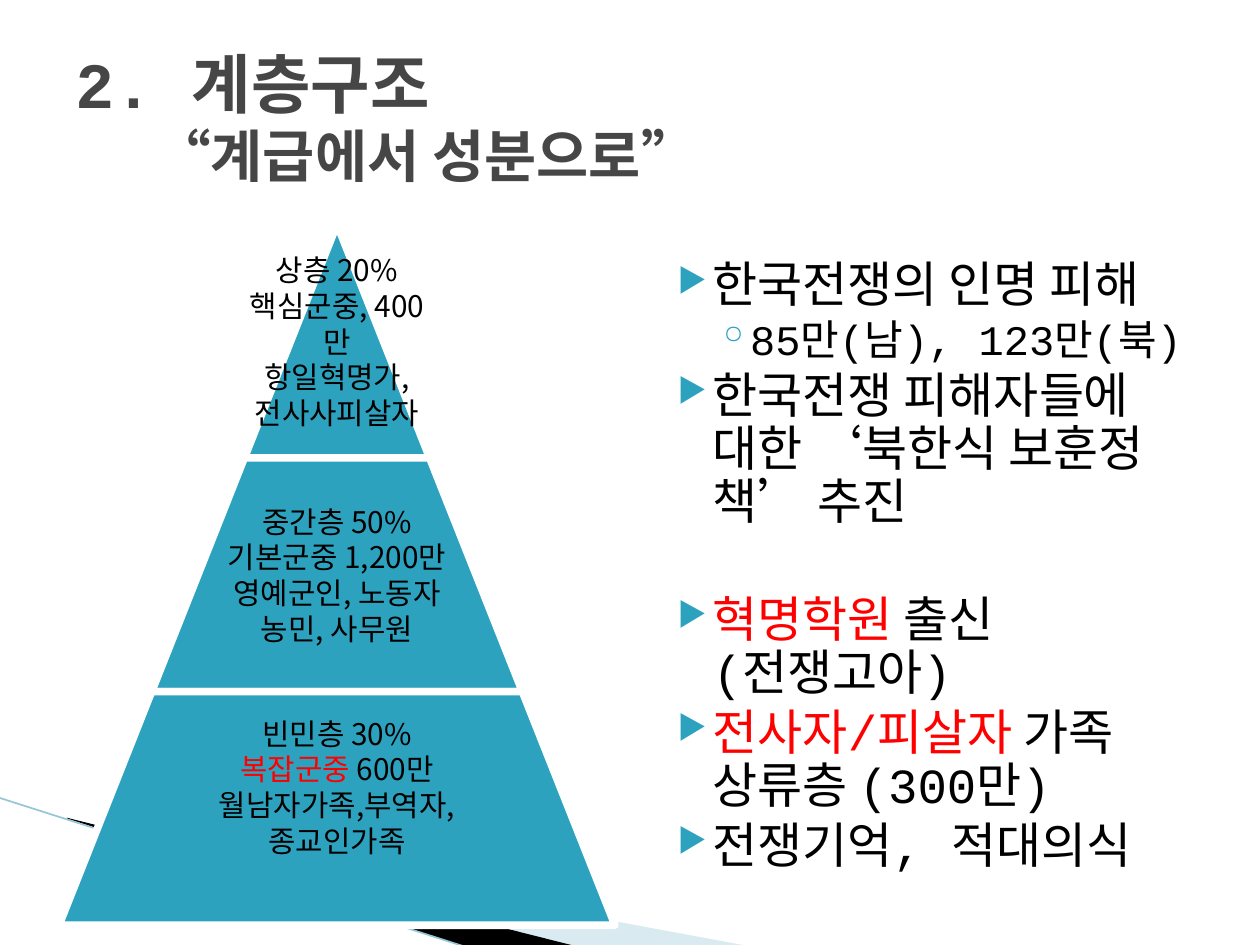
"""Build the slide on class structure: a three-tier pyramid beside a bulleted list."""
from lxml import etree
from pptx import Presentation
from pptx import util as u
from pptx.dml import color
from pptx.enum import shapes, text
from pptx.oxml import ns

Pt = u.Pt
MONO, SANS, QUOTE = "Courier New", "Noto Sans CJK KR", "Arial"
TEAL, BLACK, RED, GREY, WHITE = "2DA2BF", "000000", "FF0000", "464646", "FFFFFF"

HEADING = [("2. 계층구조", 36.9, 0), ("“계급에서 성분으로”", 32.4, 45)]
TIERS = [
    [[("상층 20%", BLACK)], [("핵심군중, 400만", BLACK)], [("항일혁명가,전사사피살자", BLACK)]],
    [[("중간층 50%", BLACK)], [("기본군중 1,200만", BLACK)],
     [("영예군인, 노동자 농민, 사무원", BLACK)]],
    [[("빈민층 30%", BLACK)], [("복잡군중 ", RED), ("600만", BLACK)],
     [("월남자가족,부역자,종교인가족", BLACK)]],
]
TIER_LABELS = [(105.8, 1.4), (137.5, 1.4), (206.6, 26)]
POINTS = [
    (0, 0, [("한국전쟁의 인명 피해", BLACK, MONO)]),
    (1, 3.2, [("85만(남), 123만(북)", BLACK, MONO)]),
    (0, 4, [("한국전쟁 피해자들에 대한 ", BLACK, MONO), ("‘", BLACK, QUOTE),
            ("북한식 보훈정책", BLACK, MONO), ("’ ", BLACK, QUOTE), ("추진", BLACK, MONO)]),
    (0, 37, [("혁명학원", RED, MONO), (" 출신(전쟁고아)", BLACK, MONO)]),
    (0, 4, [("전사자/피살자 ", RED, MONO), ("가족 상류층 (300만)", BLACK, MONO)]),
    (0, 4, [("전쟁기억, 적대의식", BLACK, MONO)]),
]
LEVELS = [
    {"size": 28, "margin": 28.8, "hang": 20.2, "bullet": "▶", "scale": 68},
    {"size": 24, "margin": 49, "hang": 18, "bullet": "◦", "scale": 100},
]
WAVES = [
    ("A0CBDC", 40, [(39.6, 468.7), (428.4, 540.7), (328.3, 540.7), (39.6, 468)]),
    (BLACK, 100, [(38.2, 467.3), (329, 540.7), (267.8, 541.4), (38.9, 468)]),
]
CENTER, PYRAMID_TOP, TIER_STEP, TIER_WIDTH = 192.6, 128.2, 133.5, 105.9


def rgb(value):
    return color.RGBColor.from_string(value)


def add_xml(parent, tag, **attributes):
    return etree.SubElement(parent, ns.qn(tag), attributes)


def paint(shape, fill, line=None, width=0):
    shape.shadow.inherit = False
    shape.fill.solid()
    shape.fill.fore_color.rgb = rgb(fill)
    if line:
        shape.line.color.rgb = rgb(line)
        shape.line.width = Pt(width)
    else:
        shape.line.fill.background()


def add_run(paragraph, words, size, tint, face, bold=False):
    run = paragraph.add_run()
    run.text = words
    run.font.size, run.font.bold, run.font.name = Pt(size), bold, face
    run.font.color.rgb = rgb(tint)
    add_xml(run.font._element, "a:ea", typeface=SANS)


def add_frame(slide, left, top, width, height, anchor=text.MSO_ANCHOR.MIDDLE):
    box = slide.shapes.add_textbox(Pt(left), Pt(top), Pt(width), Pt(height))
    box.text_frame.word_wrap = True
    box.text_frame.vertical_anchor = anchor
    return box


def paragraphs(frame, items):
    for index, item in enumerate(items):
        yield (frame.add_paragraph() if index else frame.paragraphs[0]), item


def draw_waves(slide):
    for fill, opacity, corners in WAVES:
        start, *rest = [(Pt(x), Pt(y)) for x, y in corners]
        builder = slide.shapes.build_freeform(*start)
        builder.add_line_segments(rest)
        wave = builder.convert_to_shape()
        paint(wave, fill)
        if opacity < 100:
            tint = wave._element.spPr.find(".//" + ns.qn("a:srgbClr"))
            add_xml(tint, "a:alpha", val=str(opacity * 1000))
    edge = slide.shapes.add_connector(
        shapes.MSO_CONNECTOR.STRAIGHT, Pt(-0.7), Pt(455.8), Pt(267.1), Pt(541.4))
    edge.line.color.rgb = rgb("97C5D8")
    edge.line.width = Pt(0.95)
    add_xml(edge._element.spPr, "a:effectLst")


def draw_heading(slide):
    frame = add_frame(slide, 36, 21.6, 648, 90).text_frame
    for paragraph, (words, size, margin) in paragraphs(frame, HEADING):
        paragraph._p.get_or_add_pPr().set("marL", str(Pt(margin)))
        add_run(paragraph, words, size, GREY, MONO, bold=True)


def draw_points(slide):
    panel = add_frame(slide, 371.5, 145.4, 322.6, 380.2, text.MSO_ANCHOR.TOP)
    paint(panel, WHITE)
    for paragraph, (level, gap, runs) in paragraphs(panel.text_frame, POINTS):
        style = LEVELS[level]
        props = paragraph._p.get_or_add_pPr()
        props.set("marL", str(Pt(style["margin"])))
        props.set("indent", str(-Pt(style["hang"])))
        add_xml(add_xml(props, "a:buClr"), "a:srgbClr", val=TEAL)
        add_xml(props, "a:buSzPct", val=str(style["scale"] * 1000))
        add_xml(props, "a:buChar", char=style["bullet"])
        paragraph.level = level
        paragraph.line_spacing = 0.9
        paragraph.space_before = Pt(gap)
        for words, tint, face in runs:
            add_run(paragraph, words, style["size"], tint, face)


def draw_pyramid(slide):
    for index, (lines, (label_width, bottom)) in enumerate(zip(TIERS, TIER_LABELS)):
        width, top = TIER_WIDTH * (index + 1), PYRAMID_TOP + TIER_STEP * index
        tier = slide.shapes.add_shape(
            shapes.MSO_SHAPE.TRAPEZOID, Pt(CENTER - width / 2), Pt(top), Pt(width), Pt(TIER_STEP))
        tier.adjustments[0] = TIER_WIDTH / 2 / min(width, TIER_STEP)
        paint(tier, TEAL, WHITE, 4.33)
        frame = add_frame(slide, CENTER - label_width / 2, top, label_width, TIER_STEP).text_frame
        frame.margin_left = frame.margin_right = frame.margin_top = Pt(1.4)
        frame.margin_bottom = Pt(bottom)
        for paragraph, runs in paragraphs(frame, lines):
            paragraph.alignment = text.PP_ALIGN.CENTER
            for words, tint in runs:
                add_run(paragraph, words, 17, tint, SANS)


def main():
    deck = Presentation()
    deck.slide_width, deck.slide_height = Pt(720), Pt(540)
    slide = deck.slides.add_slide(deck.slide_layouts[6])
    draw_waves(slide)
    draw_heading(slide)
    draw_points(slide)
    draw_pyramid(slide)
    deck.save("out.pptx")


if __name__ == "__main__":
    main()
